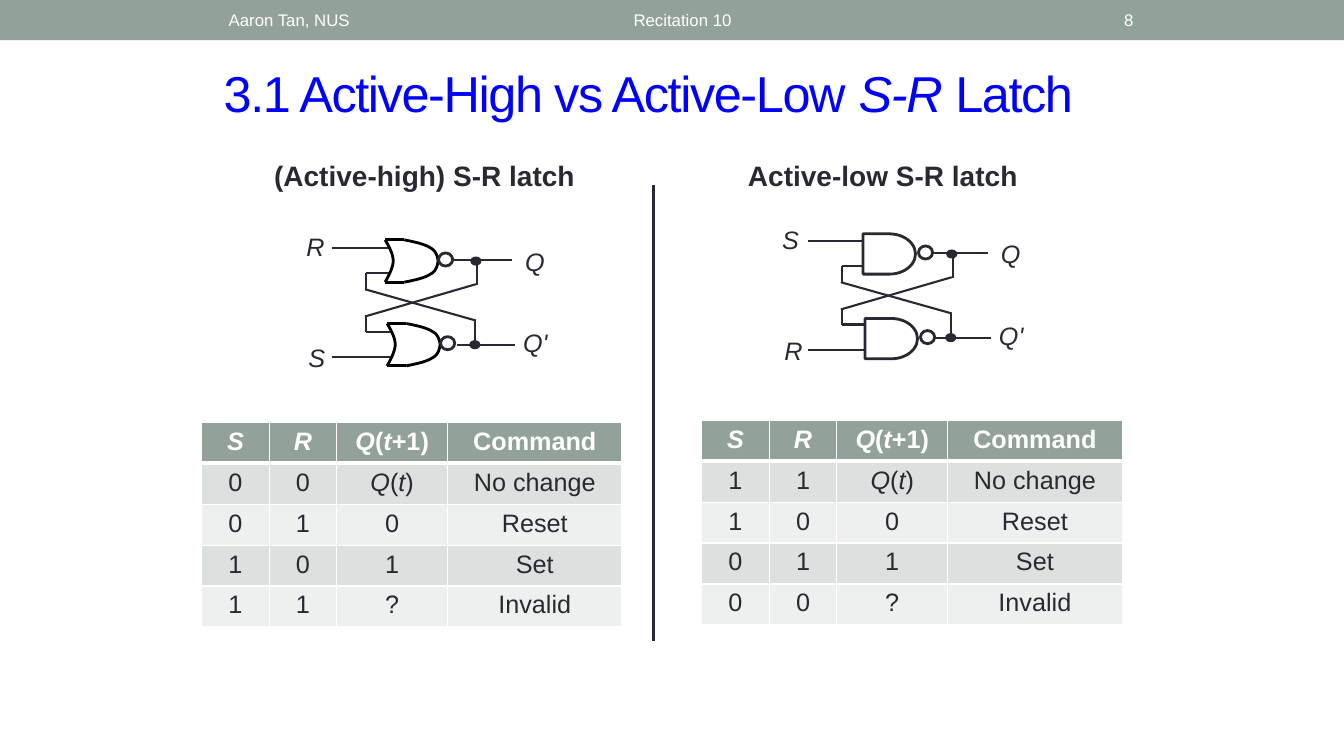
import pptx
import pptx.dml.color
import pptx.enum.shapes
import pptx.enum.text
import pptx.oxml
import pptx.oxml.ns
import pptx.util

Inches = pptx.util.Inches
SHAPE = pptx.enum.shapes.MSO_SHAPE
ALIGN = pptx.enum.text.PP_ALIGN
ANCHOR = pptx.enum.text.MSO_ANCHOR
NS = pptx.oxml.ns.nsdecls("a")

INK, SAGE, WHITE, BLACK, BLUE = "292934", "93A299", "FFFFFF", "000000", "0000FF"
BANDS = ("DCE0DE", "EEF0EF")
COL_WIDTHS = (0.67, 0.67, 1.1, 1.73)
ROW_HEIGHT = 2.03 / 5

# Wires of a latch, relative to its box: x1, y1, x2, y2
WIRES = (
    (0.35, 0.21, 0.94, 0.21), (0.35, 1.29, 0.94, 1.29),
    (0.69, 0.46, 0.94, 0.46), (0.69, 1.04, 0.94, 1.04),
    (0.69, 0.46, 0.69, 0.63), (0.69, 0.88, 0.69, 1.04),
    (1.55, 0.33, 2.14, 0.33), (1.59, 1.17, 2.17, 1.17),
    (1.77, 0.93, 1.77, 1.19), (1.79, 0.34, 1.79, 0.58),
    (0.68, 0.62, 1.78, 0.93), (1.78, 0.57, 0.68, 0.89),
)
JUNCTIONS = ((1.72, 1.13), (1.73, 0.30))
LABELS = ((0, 0, 0.38), (0.02, 1.1, 0.38), (2.17, 0.14, 0.46), (2.15, 0.95, 0.46))

# NOR gate sides as Bezier points, relative to the gate
NOR_HEIGHT = 0.42
NOR_BACK = ((0, 0), (0.04, 0.07), (0.08, 0.14), (0.08, 0.21),
            (0.08, 0.28), (0.02, 0.38), (0, 0.42))
NOR_TOP = ((0.19, 0), (0.29, 0.02), (0.39, 0.04), (0.45, 0.08),
           (0.51, 0.11), (0.52, 0.17), (0.53, 0.23))
NOR_BOTTOM = tuple((x, NOR_HEIGHT - y) for x, y in NOR_TOP)


def rgb(color):
    return pptx.dml.color.RGBColor.from_string(color)


def write(p, text, size, color, bold=False, align=ALIGN.LEFT, spacing=None):
    """Fill a paragraph; parts between asterisks are italic."""
    p.alignment = align
    for i, part in enumerate(text.split("*")):
        if not part:
            continue
        r = p.add_run()
        r.text = part
        style = {"name": "Arial", "size": pptx.util.Pt(size), "bold": bold, "italic": i % 2 == 1}
        for key, value in style.items():
            setattr(r.font, key, value)
        r.font.color.rgb = rgb(color)
        if spacing is not None:
            r._r.get_or_add_rPr().set("spc", str(spacing * 100))


def add_text(shapes, box, text, size, color, anchor=ANCHOR.TOP, **style):
    tf = shapes.add_textbox(*map(Inches, box)).text_frame
    tf.word_wrap = True
    tf.vertical_anchor = anchor
    write(tf.paragraphs[0], text, size, color, **style)


def style_shape(sp, fill, line, width):
    sp.shadow.inherit = False
    if fill:
        sp.fill.solid()
        sp.fill.fore_color.rgb = rgb(fill)
    else:
        sp.fill.background()
    if line:
        sp.line.color.rgb = rgb(line)
        sp.line.width = pptx.util.Pt(width)
    else:
        sp.line.fill.background()


def add_preset(shapes, kind, box, fill=None, line=None, width=2):
    style_shape(shapes.add_shape(kind, *map(Inches, box)), fill, line, width)


def add_line(shapes, x1, y1, x2, y2, color, width):
    c = shapes.add_connector(pptx.enum.shapes.MSO_CONNECTOR.STRAIGHT,
                             *map(Inches, (x1, y1, x2, y2)))
    c.line.color.rgb = rgb(color)
    c.line.width = pptx.util.Pt(width)
    c._element.spPr.append(pptx.oxml.parse_xml(f"<a:effectLst {NS}/>"))


def add_curve(shapes, x, y, points, steps=10):
    """Draw a chain of cubic Bezier segments as an open outline."""
    def at(segment, t):
        weights = ((1 - t) ** 3, 3 * t * (1 - t) ** 2, 3 * t * t * (1 - t), t ** 3)
        return tuple(Inches(start + sum(w * pt[axis] for w, pt in zip(weights, segment)))
                     for axis, start in enumerate((x, y)))

    outline = [at(points[k:k + 4], n / steps)
               for k in range(0, len(points) - 1, 3) for n in range(steps + 1)]
    builder = shapes.build_freeform(*outline[0])
    builder.add_line_segments(outline[1:], close=False)
    style_shape(builder.convert_to_shape(), None, BLACK, 2)


def add_nor_gate(shapes, x, y):
    for side in (NOR_BACK, NOR_TOP, NOR_BOTTOM):
        add_curve(shapes, x, y, side)
    for edge in (y, y + NOR_HEIGHT):
        add_line(shapes, x, edge, x + 0.19, edge, BLACK, 2)
    add_preset(shapes, SHAPE.OVAL, (x + 0.53, y + 0.13, 0.14, 0.13), None, INK)


def add_nand_gate(shapes, x, y):
    add_preset(shapes, SHAPE.OVAL, (x + 0.55, y + 0.12, 0.14, 0.13), WHITE, INK)
    add_preset(shapes, SHAPE.FLOWCHART_DELAY, (x, y, 0.52, 0.4), WHITE, INK)


def add_latch(s, x, y, names, add_gate, gates):
    shapes = s.shapes.add_group_shape().shapes
    for x1, y1, x2, y2 in WIRES:
        add_line(shapes, x + x1, y + y1, x + x2, y + y2, INK, 1.5)
    for dx, dy in JUNCTIONS:
        add_preset(shapes, SHAPE.OVAL, (x + dx, y + dy, 0.1, 0.08), INK, INK, 0.75)
    for name, (dx, dy, w) in zip(names, LABELS):
        add_text(shapes, (x + dx, y + dy, w, 0.4), f"*{name}*", 18, INK)
    for dx, dy in gates:
        add_gate(shapes, x + dx, y + dy)


def set_borders(cell, top, bottom):
    tc_pr = cell._tc.get_or_add_tcPr()
    for i, (side, width) in enumerate((("L", 1), ("R", 1), ("T", top), ("B", bottom))):
        tc_pr.insert(i, pptx.oxml.parse_xml(
            f'<a:ln{side} {NS} w="{width * 12700}"><a:solidFill>'
            f'<a:srgbClr val="{WHITE}"/></a:solidFill></a:ln{side}>'))


def add_truth_table(s, x, y, inputs):
    rows = [("*S*", "*R*", "*Q*(*t*+1)", "Command")]
    results = (("*Q*(*t*)", "No change"), ("0", "Reset"), ("1", "Set"), ("?", "Invalid"))
    rows += [(*pair, *result) for pair, result in zip(inputs, results)]
    table = s.shapes.add_table(len(rows), len(COL_WIDTHS), Inches(x), Inches(y),
                               Inches(sum(COL_WIDTHS)), Inches(ROW_HEIGHT * len(rows))).table
    for col, width in zip(table.columns, COL_WIDTHS):
        col.width = Inches(width)
    for i, row in enumerate(rows):
        table.rows[i].height = Inches(ROW_HEIGHT)
        header = i == 0
        for j, text in enumerate(row):
            cell = table.cell(i, j)
            cell.fill.solid()
            cell.fill.fore_color.rgb = rgb(SAGE if header else BANDS[(i - 1) % 2])
            set_borders(cell, 3 if i == 1 else 1, 3 if header else 1)
            write(cell.text_frame.paragraphs[0], text, 18, WHITE if header else INK,
                  bold=header, align=ALIGN.CENTER)


def add_header(s, width, height):
    add_preset(s.shapes, SHAPE.RECTANGLE, (0, 0, width, height), SAGE)
    for x, w, text, align in ((2.17, 3.17, "Aaron Tan, NUS", ALIGN.LEFT),
                              (4.52, 4.5, "Recitation 10", ALIGN.CENTER),
                              (10.39, 0.95, "8", ALIGN.RIGHT)):
        add_text(s.shapes, (x, 0.02, w, height - 0.04), text, 12, WHITE,
                 anchor=ANCHOR.MIDDLE, align=align)


def main():
    prs = pptx.Presentation()
    prs.slide_width, prs.slide_height = Inches(13.33), Inches(7.5)
    s = prs.slides.add_slide(prs.slide_layouts[6])
    add_header(s, 13.33, 0.4)
    add_text(s.shapes, (2.12, 0.57, 9.38, 0.7), "3.1 Active-High vs Active-Low *S-R* Latch",
             36, BLUE, anchor=ANCHOR.MIDDLE, spacing=-1)
    add_line(s.shapes, 6.48, 1.84, 6.48, 6.36, INK, 2)

    add_text(s.shapes, (2.62, 1.52, 3.27, 0.44), "(Active-high) S-R latch", 20, INK, bold=True)
    add_latch(s, 2.94, 2.25, ("R", "S", "Q", "Q'"), add_nor_gate, ((0.88, 0.13), (0.9, 0.96)))
    add_truth_table(s, 2, 4.19, ("00", "01", "10", "11"))

    add_text(s.shapes, (7.32, 1.52, 3.01, 0.44), "Active-low S-R latch", 20, INK, bold=True)
    add_latch(s, 7.66, 2.18, ("S", "R", "Q", "Q'"), add_nand_gate, ((0.9, 0.14), (0.92, 0.98)))
    add_truth_table(s, 6.96, 4.17, ("11", "10", "01", "00"))
    prs.save("out.pptx")


if __name__ == "__main__":
    main()
